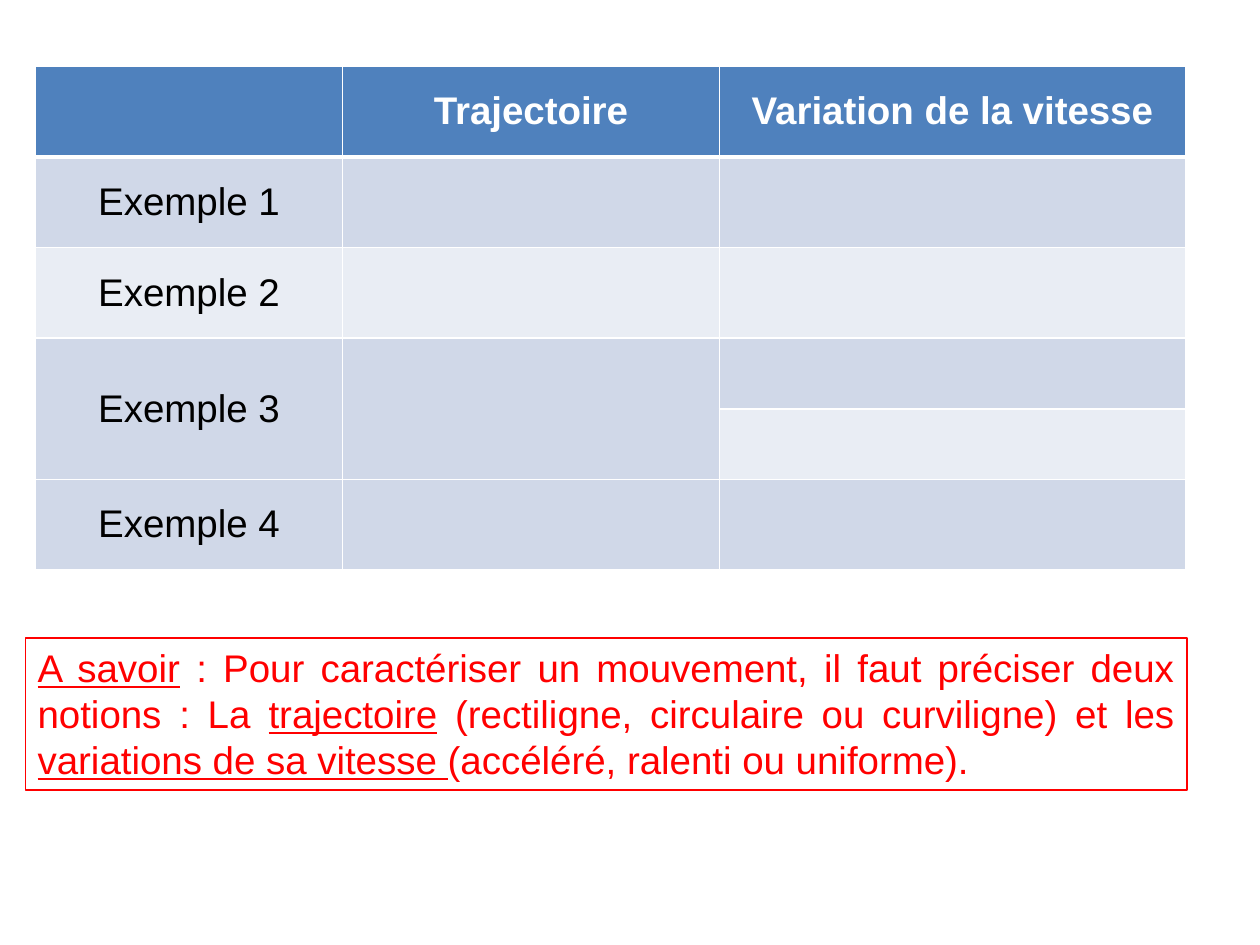
from dataclasses import dataclass

from lxml import etree
from pptx import Presentation
from pptx.dml.color import RGBColor
from pptx.enum.text import MSO_ANCHOR, MSO_AUTO_SIZE, PP_ALIGN
from pptx.oxml.ns import qn
from pptx.util import Emu, Inches, Pt

CENTER, JUSTIFY = PP_ALIGN.CENTER, PP_ALIGN.JUSTIFY
MIDDLE = MSO_ANCHOR.MIDDLE
GROW = MSO_AUTO_SIZE.SHAPE_TO_FIT_TEXT
WIDTH, HEIGHT = Inches(10), Inches(7.5)


@dataclass(frozen=True)
class Theme:
    font: str = "Arial"
    size: float = 22
    header: str = "4F81BD"
    bands: tuple[str, str] = ("D0D8E8", "E9EDF4")
    white: str = "FFFFFF"
    black: str = "000000"
    accent: str = "FF0000"
    thin: float = 1
    thick: float = 3
    frame: float = 0.75


@dataclass(frozen=True)
class Area:
    """A rectangle in shares of the slide's size."""
    left: float
    top: float
    width: float
    height: float

    def lengths(self) -> tuple[Emu, Emu, Emu, Emu]:
        return (Emu(int(self.left * WIDTH)), Emu(int(self.top * HEIGHT)),
                Emu(int(self.width * WIDTH)), Emu(int(self.height * HEIGHT)))


@dataclass(frozen=True)
class Row:
    height: float
    texts: tuple[str, ...]
    joins_next: tuple[int, ...] = ()


@dataclass(frozen=True)
class Span:
    text: str
    underline: bool = False


THEME = Theme()
TABLE_AREA = Area(0.028, 0.07, 0.913, 0.536)
NOTE_AREA = Area(0.02, 0.675, 0.922, 0.161)
COLUMNS = (2.44, 2.99, 3.7)
TALL, SHORT = 0.72, 0.56
ROWS = (
    Row(TALL, ("", "Trajectoire", "Variation de la vitesse")),
    Row(TALL, ("Exemple 1", "", "")),
    Row(TALL, ("Exemple 2", "", "")),
    Row(SHORT, ("Exemple 3", "", ""), joins_next=(0, 1)),
    Row(SHORT, ("", "", "")),
    Row(TALL, ("Exemple 4", "", "")),
)
NOTE = (
    Span("A savoir", True),
    Span(" : Pour caractériser un mouvement, il faut préciser deux notions : La "),
    Span("trajectoire", True),
    Span(" (rectiligne, circulaire ou curviligne) et les "),
    Span("variations de sa vitesse ", True),
    Span("(accéléré, ralenti ou uniforme)."),
)


def add_span(para, text: str, color: str, **formats) -> None:
    span = para.add_run()
    span.text = text
    for name, value in {"name": THEME.font, "size": Pt(THEME.size), **formats}.items():
        setattr(span.font, name, value)
    span.font.color.rgb = RGBColor.from_string(color)


def set_borders(cell, widths: dict[str, float]) -> None:
    properties = cell._tc.get_or_add_tcPr()
    for side, width in widths.items():
        line = etree.SubElement(properties, qn(f"a:ln{side}"), w=str(Pt(width)))
        fill = etree.SubElement(line, qn("a:solidFill"))
        etree.SubElement(fill, qn("a:srgbClr"), val=THEME.white)


def style_cell(cell, text: str, row: int) -> None:
    is_header = row == 0
    set_borders(cell, {"L": THEME.thin, "R": THEME.thin,
                       "T": THEME.thick if row == 1 else THEME.thin,
                       "B": THEME.thick if is_header else THEME.thin})
    cell.fill.solid()
    color = THEME.header if is_header else THEME.bands[(row - 1) % 2]
    cell.fill.fore_color.rgb = RGBColor.from_string(color)
    cell.vertical_anchor = MIDDLE
    para = cell.text_frame.paragraphs[0]
    para.alignment = CENTER
    if text:
        add_span(para, text, THEME.white if is_header else THEME.black, bold=is_header)


def add_example_table(page) -> None:
    table = page.shapes.add_table(len(ROWS), len(COLUMNS), *TABLE_AREA.lengths()).table
    for column, width in zip(table.columns, COLUMNS):
        column.width = Inches(width)
    for index, row in enumerate(ROWS):
        table.rows[index].height = Inches(row.height)
        for column, text in enumerate(row.texts):
            style_cell(table.cell(index, column), text, index)
        for column in row.joins_next:
            table.cell(index, column).merge(table.cell(index + 1, column))


def add_note(page) -> None:
    box = page.shapes.add_textbox(*NOTE_AREA.lengths())
    box.line.color.rgb = RGBColor.from_string(THEME.accent)
    box.line.width = Pt(THEME.frame)
    for name, value in {"word_wrap": True, "auto_size": GROW}.items():
        setattr(box.text_frame, name, value)
    para = box.text_frame.paragraphs[0]
    para.alignment = JUSTIFY
    for span in NOTE:
        add_span(para, span.text, THEME.accent, underline=span.underline)


def main() -> None:
    deck = Presentation()
    deck.slide_width, deck.slide_height = WIDTH, HEIGHT
    page = deck.slides.add_slide(deck.slide_layouts[6])
    add_example_table(page)
    add_note(page)
    deck.save("out.pptx")


if __name__ == "__main__":
    main()
